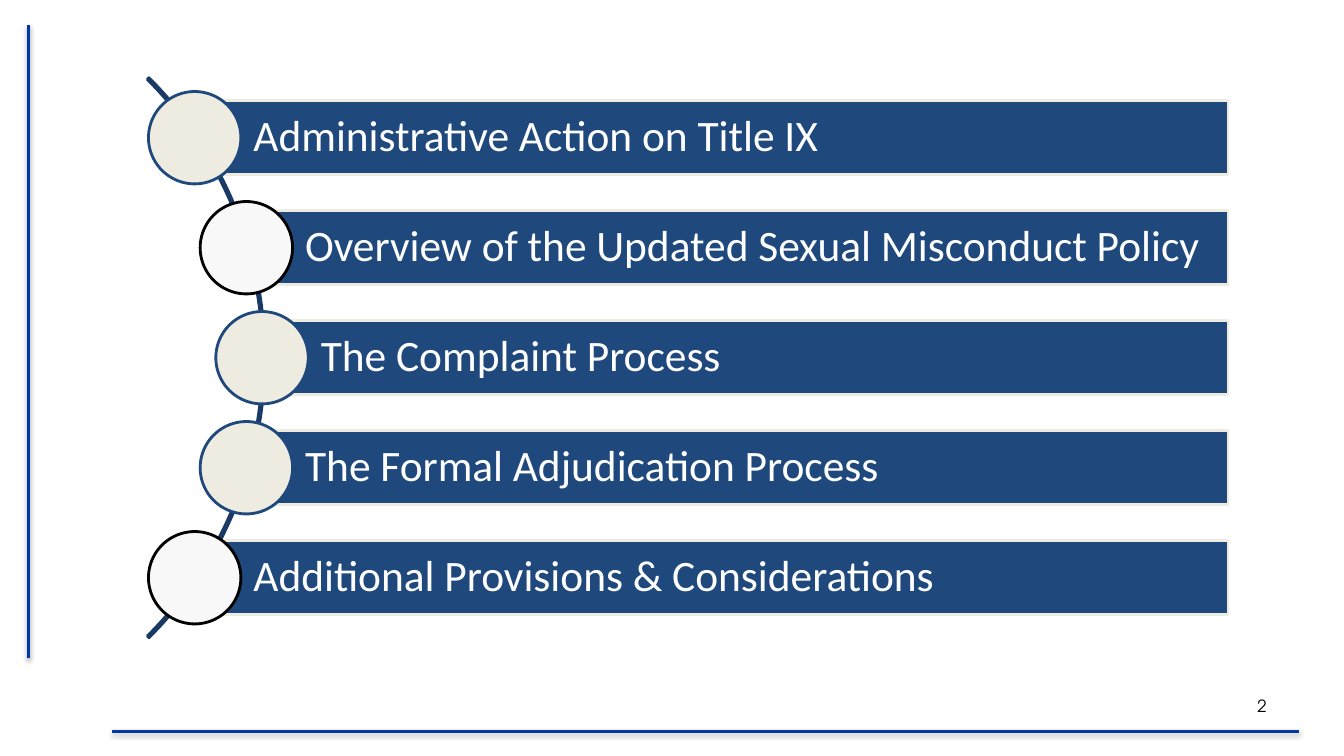
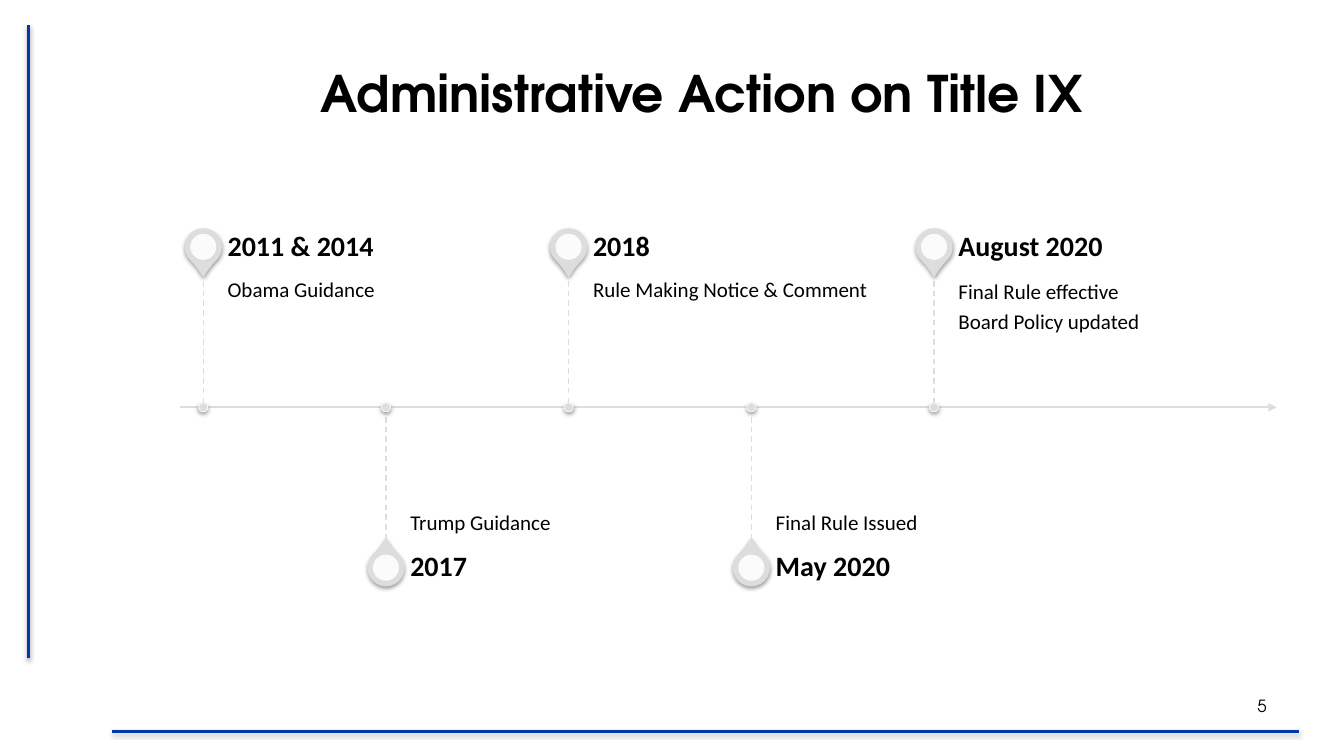
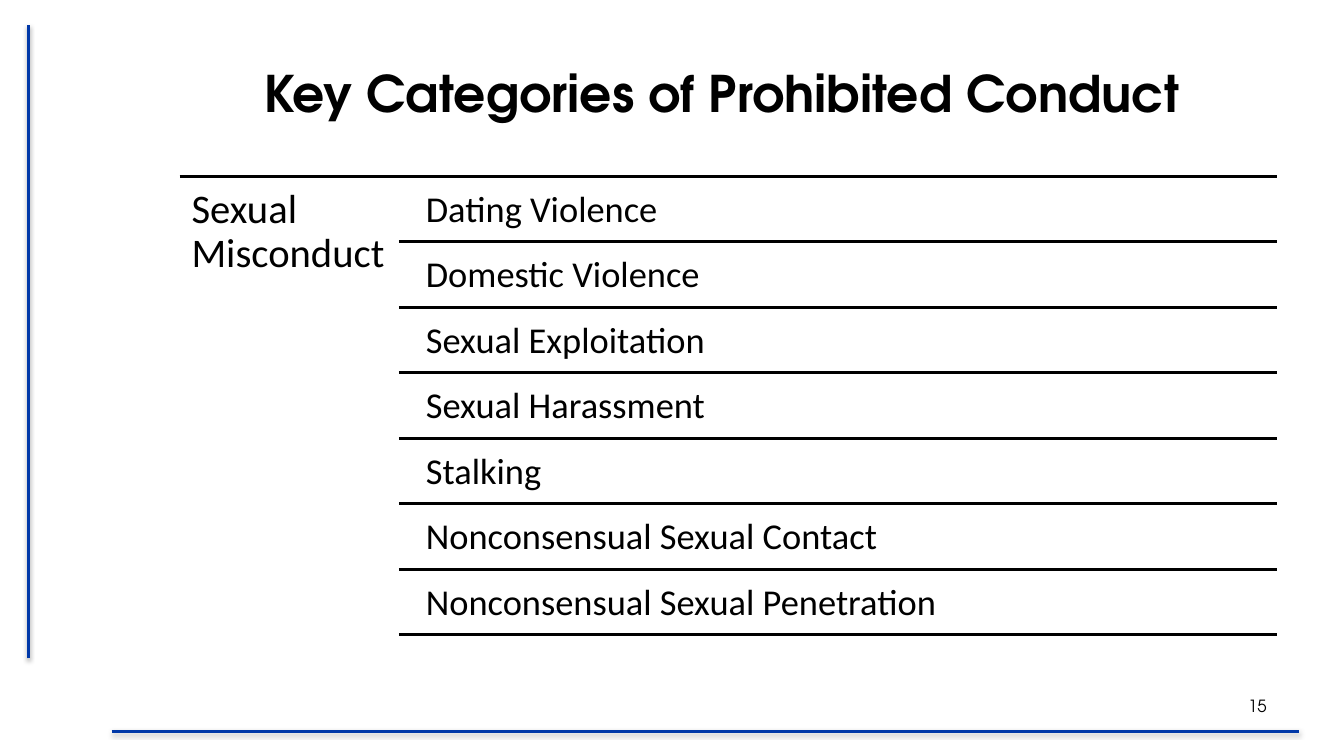
"""Build three slides on a Title IX policy update."""
from math import sqrt

from lxml import etree
from pptx import Presentation
from pptx.dml.color import RGBColor
from pptx.enum.dml import MSO_LINE
from pptx.enum.shapes import MSO_CONNECTOR, MSO_SHAPE
from pptx.enum.text import MSO_ANCHOR, PP_ALIGN
from pptx.oxml.ns import qn
from pptx.util import Inches, Pt

RECT, OVAL = MSO_SHAPE.RECTANGLE, MSO_SHAPE.OVAL
DROP, ARC = MSO_SHAPE.TEAR, MSO_SHAPE.BLOCK_ARC
STRAIGHT = MSO_CONNECTOR.STRAIGHT
DASH = MSO_LINE.DASH
TOP, MID, LOW = MSO_ANCHOR.TOP, MSO_ANCHOR.MIDDLE, MSO_ANCHOR.BOTTOM
LEFT, CENTER, RIGHT = PP_ALIGN.LEFT, PP_ALIGN.CENTER, PP_ALIGN.RIGHT

BLACK = RGBColor(0x00, 0x00, 0x00)
WHITE = RGBColor(0xFF, 0xFF, 0xFF)
RULE = RGBColor(0x00, 0x38, 0xA8)
NAVY = RGBColor(0x1F, 0x49, 0x7D)
DEEP = RGBColor(0x19, 0x3A, 0x64)
CREAM = RGBColor(0xEE, 0xEC, 0xE1)
PALE = RGBColor(0xF8, 0xF8, 0xF8)
GRAY = RGBColor(0xDD, 0xDD, 0xDD)

BODY, HEAD = "Calibri", "TeX Gyre Adventor"
WIDE, HIGH = 13.33, 7.5
COLS = 16
EDGE, END = 2.14, 15.2
PAD = (0.12, 0.06, 0.12, 0.06)

TOPICS = [
    ("Administrative Action on Title IX", CREAM, NAVY),
    ("Overview of the Updated Sexual Misconduct Policy", PALE, BLACK),
    ("The Complaint Process", CREAM, NAVY),
    ("The Formal Adjudication Process", CREAM, NAVY),
    ("Additional Provisions & Considerations", PALE, BLACK),
]
EVENTS = [
    ("2011 & 2014", "Obama Guidance"),
    ("2017", "Trump Guidance"),
    ("2018", "Rule Making Notice & Comment"),
    ("May 2020", "Final Rule Issued"),
    ("August 2020", "Final Rule effective\nBoard Policy updated"),
]
KINDS = [
    "Dating Violence", "Domestic Violence", "Sexual Exploitation",
    "Sexual Harassment", "Stalking", "Nonconsensual Sexual Contact",
    "Nonconsensual Sexual Penetration",
]


def grid(*cells):
    """Turn grid cells into lengths; cells are square."""
    return [Inches(cell * WIDE / COLS) for cell in cells]


def shade(effects):
    """Add the soft drop shadow to an effect list."""
    outer = etree.SubElement(effects, qn("a:outerShdw"), blurRad=str(Pt(3.1)),
                             dist=str(Pt(1.6)), dir="5400000", rotWithShape="0")
    color = etree.SubElement(outer, qn("a:srgbClr"), val=str(BLACK))
    etree.SubElement(color, qn("a:alpha"), val="38000")


def line(slide, start, end, color, width=2, dash=None, arrow=False, shadow=False):
    """Draw a straight line between two grid points."""
    rule = slide.shapes.add_connector(STRAIGHT, *grid(*start, *end))
    rule.line.color.rgb = color
    rule.line.width = Pt(width)
    if dash:
        rule.line.dash_style = dash
    if arrow:
        etree.SubElement(rule.line._get_or_add_ln(), qn("a:tailEnd"), type="triangle")
    effects = etree.SubElement(rule._element.spPr, qn("a:effectLst"))
    if shadow:
        shade(effects)


def form(slide, kind, box, fill=None, edge=None, width=2, shadow=False):
    """Draw a preset shape in a grid box."""
    shape = slide.shapes.add_shape(kind, *grid(*box))
    shape.shadow.inherit = False
    if shadow:
        shade(shape._element.spPr.find(qn("a:effectLst")))
    if fill is None:
        shape.fill.background()
    else:
        shape.fill.solid()
        shape.fill.fore_color.rgb = fill
    if edge is None:
        shape.line.fill.background()
    else:
        shape.line.color.rgb = edge
        shape.line.width = Pt(width)
    return shape


def disc(slide, x, y, size, fill, edge=None, width=2, shadow=False, kind=OVAL):
    """Draw a round shape about its centre."""
    box = (x - size / 2, y - size / 2, size, size)
    return form(slide, kind, box, fill, edge, width, shadow)


def write(shape, text, size, color=BLACK, font=BODY, bold=False, anchor=TOP,
          align=LEFT, pad=PAD, lead=0.9):
    """Set and format the text of a shape."""
    frame = shape.text_frame
    frame.word_wrap = True
    frame.vertical_anchor = anchor
    (frame.margin_left, frame.margin_top,
     frame.margin_right, frame.margin_bottom) = grid(*pad)
    frame.text = text
    for para in frame.paragraphs:
        para.alignment = align
        para.line_spacing = lead
        para.space_after = Pt(size * 0.35)
        for run in para.runs:
            run.font.name = font
            run.font.size = Pt(size)
            run.font.bold = bold
            run.font.color.rgb = color


def label(slide, box, text, size, **style):
    """Add a text box in a grid box."""
    write(slide.shapes.add_textbox(*grid(*box)), text, size, **style)


def base(deck, number):
    """Add a slide with its two rules and its number."""
    slide = deck.slides.add_slide(deck.slide_layouts[6])
    line(slide, (0.34, 7.84), (0.34, 0.3), RULE, shadow=True)
    line(slide, (1.33, 8.71), (15.47, 8.71), RULE, shadow=True)
    label(slide, (14.23, 8.17, 0.97, 0.48), number, 12, font=HEAD,
          anchor=MID, align=RIGHT, lead=1.0)
    return slide


def title(slide, text, left):
    """Add the slide title."""
    label(slide, (left, 0.35, 13.07, 1.5), text, 36, font=HEAD, bold=True,
          anchor=MID, align=CENTER, lead=1.0)


def agenda(slide):
    """Draw the topics as bars along an arc."""
    hub, mid, reach, step, tall = -1.56, 4.26, 4.68, 1.31, 0.88
    arc = disc(slide, hub, mid, 9.43, None, DEEP, kind=ARC)
    for i, value in enumerate((189, 27, 0.003)):
        arc.adjustments[i] = value
    for i, (text, fill, edge) in enumerate(TOPICS):
        drop = (i - (len(TOPICS) - 1) / 2) * step
        x, y = hub + sqrt(reach ** 2 - drop ** 2), mid + drop
        bar = form(slide, RECT, (x, y - tall / 2, 14.62 - x, tall), NAVY, CREAM)
        write(bar, text, 31, WHITE, anchor=MID, pad=(0.7, 0.11, 0.11, 0.11))
        disc(slide, x, y, 1.1, fill, edge)


def event(slide, x, axis, side, date, text):
    """Draw one event above (-1) or below (1) the axis."""
    stem, tall, wide = 1.62, 0.58, 3.62
    tip, pin, left = axis + side * stem, axis + side * 1.91, x + 0.29
    drop = disc(slide, x, pin, 0.41, GRAY, GRAY, shadow=True, kind=DROP)
    drop.adjustments[0] = 1.15
    drop.rotation = 225 + side * 90
    hole = disc(slide, x, pin, 0.31, WHITE)
    color = hole._element.spPr.find(".//" + qn("a:srgbClr"))
    etree.SubElement(color, qn("a:alpha"), val="90000")
    above = side < 0
    label(slide, (left, min(axis, tip), wide, stem), text, 15,
          anchor=TOP if above else LOW,
          pad=(0, 0.12, 0.12, 0.19) if above else (0, 0.19, 0, 0.12))
    label(slide, (left, pin - tall / 2, wide, tall), date, 20, bold=True,
          anchor=MID, pad=(0, 0, 0.17, 0))
    line(slide, (x, min(axis, tip)), (x, max(axis, tip)), GRAY, 1, DASH)
    disc(slide, x, axis, 0.11, GRAY, WHITE, 0.5, shadow=True)


def history(slide):
    """Draw the time line."""
    axis, first, step = 4.85, 2.42, 8.7 / 4
    title(slide, "Administrative Action on Title IX ", 1.9)
    line(slide, (EDGE, axis), (END, axis), GRAY, 1.5, arrow=True)
    for i, (date, text) in enumerate(EVENTS):
        event(slide, first + i * step, axis, 1 if i % 2 else -1, date, text)


def conduct(slide):
    """List the kinds of conduct beside their heading."""
    top, step, split, text = 2.1, 0.78, 4.75, 4.94
    title(slide, "Key Categories of Prohibited Conduct ", EDGE)
    line(slide, (EDGE, top), (END, top), BLACK)
    label(slide, (EDGE, top, split - EDGE, step * len(KINDS)),
          "Sexual Misconduct", 29, pad=(0.14,) * 4)
    for i, kind in enumerate(KINDS):
        y = top + i * step
        label(slide, (text, y + 0.04, END - text, 0.74), kind, 26, pad=(0.13,) * 4)
        line(slide, (split, y + step), (END, y + step), BLACK)


def main():
    """Build and save the deck."""
    deck = Presentation()
    deck.slide_width, deck.slide_height = Inches(WIDE), Inches(HIGH)
    for number, draw in (("2", agenda), ("5", history), ("15", conduct)):
        draw(base(deck, number))
    deck.save("out.pptx")


if __name__ == "__main__":
    main()
